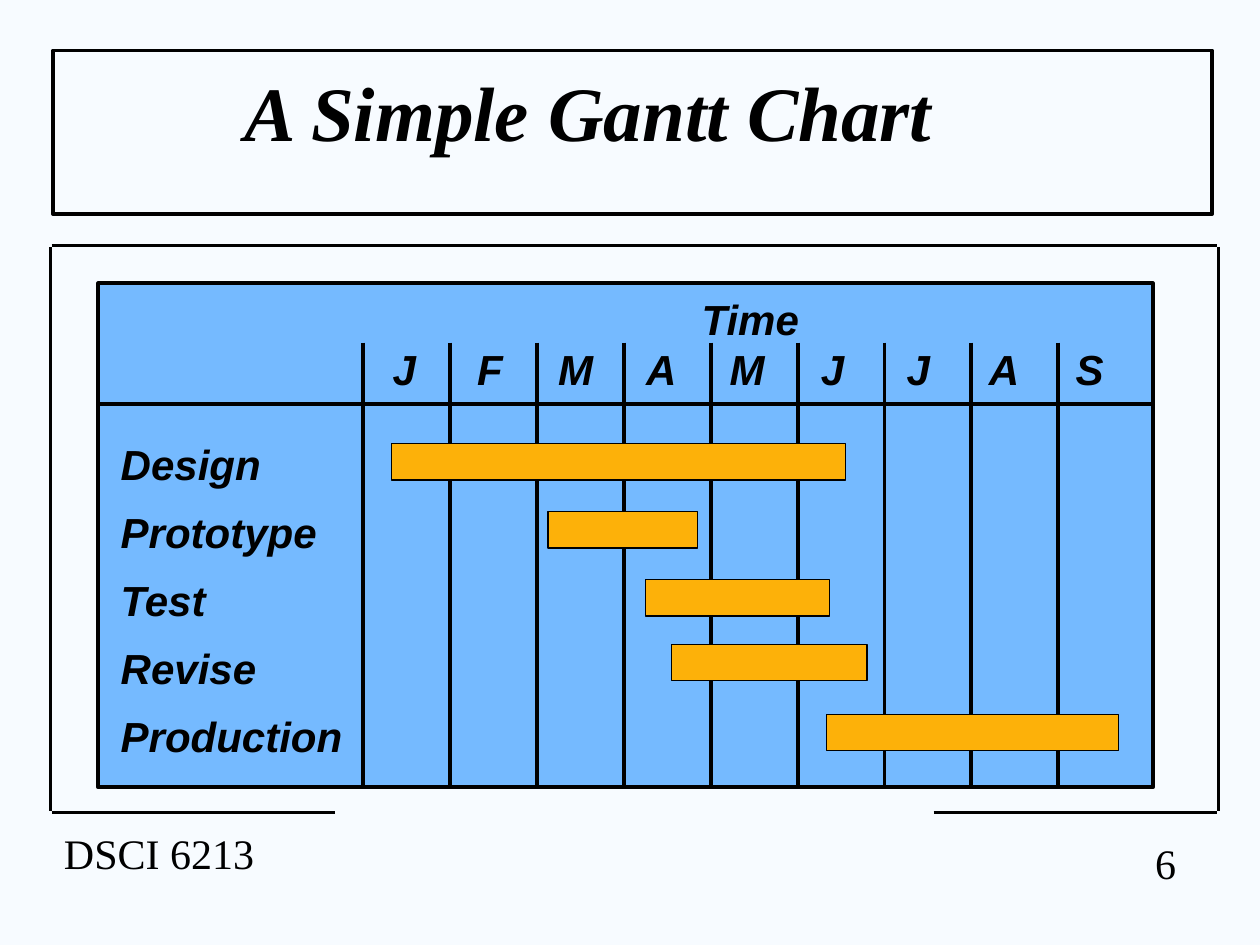
"""Build a slide with a simple Gantt chart."""
from dataclasses import dataclass

from lxml import etree
from pptx import Presentation
from pptx import util as u
from pptx.dml.color import RGBColor
from pptx.enum import shapes, text
from pptx.oxml import ns


@dataclass(frozen=True)
class Theme:
    """Colours, fonts, type sizes and line widths of the slide."""
    paper: str = "F7FBFF"
    ink: str = "000000"
    panel: str = "75BAFF"
    bar: str = "FDB109"
    serif: str = "Times New Roman"
    sans: str = "Arial"
    title_size: float = 44
    body_size: float = 24
    frame_line: float = 2
    grid_line: float = 2.25
    bar_line: float = 0.75


@dataclass(frozen=True)
class Grid:
    """Month columns and task rows of the chart, in inches."""
    left: float = 2.88
    column: float = 0.69
    top: float = 3.52
    row: float = 0.54
    bar_height: float = 0.29

    def x(self, month):
        """Return the horizontal place of a month."""
        return self.left + month * self.column

    def y(self, row):
        """Return the top of a task row."""
        return self.top + row * self.row


THEME = Theme()
GRID = Grid()
PANEL = (0.78, 2.25, 8.37, 4)
HEADER_TOP, HEADER_BOTTOM = 2.72, 3.21
MONTHS = "JFMAMJJAS"
MONTH_TAB, MONTH_PITCH = 0.12, 0.68
# task, row, first month, months
TASKS = (
    ("Design", 0, 0.33, 5.22),
    ("Prototype", 1, 2.13, 1.72),
    ("Test", 2, 3.25, 2.12),
    ("Revise", 2.95, 3.55, 2.25),
    ("Production", 3.98, 5.33, 3.36),
)


def inches(*lengths):
    """Convert several lengths to slide units."""
    return [u.Inches(length) for length in lengths]


def colour(value):
    """Return a colour from its hexadecimal text."""
    return RGBColor.from_string(value)


def add_rectangle(slide, box, width, fill=None):
    """Add an outlined rectangle, filled when a colour is given."""
    shape = slide.shapes.add_shape(shapes.MSO_SHAPE.RECTANGLE, *inches(*box))
    shape.shadow.inherit = False
    if fill:
        shape.fill.solid()
        shape.fill.fore_color.rgb = colour(fill)
    else:
        shape.fill.background()
    shape.line.color.rgb = colour(THEME.ink)
    shape.line.width = u.Pt(width)


def add_line(slide, start, end, width):
    """Add a straight line between two points."""
    line = slide.shapes.add_connector(
        shapes.MSO_CONNECTOR.STRAIGHT, *inches(*start, *end))
    line.line.color.rgb = colour(THEME.ink)
    line.line.width = u.Pt(width)
    etree.SubElement(line._element.spPr, ns.qn("a:effectLst"))


def add_run(paragraph, words, family, size, strong=True):
    """Add one formatted run to a paragraph."""
    run = paragraph.add_run()
    run.text = words
    run.font.name = family
    run.font.size = u.Pt(size)
    run.font.bold = run.font.italic = strong
    run.font.color.rgb = colour(THEME.ink)


def add_text(slide, box, lines, family, strong=True, spacing=1.0):
    """Add a text box with one paragraph for each line."""
    frame = slide.shapes.add_textbox(*inches(*box)).text_frame
    frame.word_wrap = True
    for index, words in enumerate(lines):
        paragraph = frame.add_paragraph() if index else frame.paragraphs[0]
        paragraph.line_spacing = spacing
        add_run(paragraph, words, family, THEME.body_size, strong)
    return frame


def set_centre_tabs(paragraph, first, pitch, count):
    """Give a paragraph evenly spaced centred tab stops."""
    tabs = etree.SubElement(paragraph._p.get_or_add_pPr(), ns.qn("a:tabLst"))
    for index in range(count):
        etree.SubElement(tabs, ns.qn("a:tab"), algn="ctr",
                         pos=str(u.Inches(first + index * pitch)))


def add_title(slide, words):
    """Place and format the title inside its frame."""
    add_rectangle(slide, (0.42, 0.4, 9.2, 1.3), THEME.frame_line)
    title = slide.shapes.title
    title.left, title.top, title.width, title.height = inches(0.42, 0.45, 8.5, 0.97)
    title.text_frame.vertical_anchor = text.MSO_ANCHOR.MIDDLE
    paragraph = title.text_frame.paragraphs[0]
    paragraph.alignment = text.PP_ALIGN.CENTER
    paragraph.line_spacing = 0.85
    add_run(paragraph, words, THEME.serif, THEME.title_size)


def add_border(slide):
    """Draw the border that is open at the bottom."""
    left, right, top, bottom = 0.4, 9.67, 1.95, 6.45
    gap, stub = 0.01, 2.25
    inner_left, inner_right = left + gap, right - gap
    for start, end in (
        ((inner_left, top), (inner_right, top)),
        ((left, top + gap), (left, bottom - gap)),
        ((right, top + gap), (right, bottom - gap)),
        ((inner_left, bottom), (inner_left + stub, bottom)),
        ((inner_right - stub, bottom), (inner_right, bottom)),
    ):
        add_line(slide, start, end, THEME.frame_line)


def add_calendar(slide):
    """Draw the panel, its heading, its grid and the task names."""
    left, top, width, height = PANEL
    add_rectangle(slide, PANEL, THEME.grid_line, THEME.panel)
    heading = add_text(slide, (2.99, 2.28, 5.93, 0.9),
                       ("Time", "\t" + "\t".join(MONTHS)), THEME.sans)
    time, months = heading.paragraphs
    time.alignment = text.PP_ALIGN.CENTER
    set_centre_tabs(months, MONTH_TAB, MONTH_PITCH, len(MONTHS))
    for month in range(len(MONTHS)):
        x = GRID.x(month)
        add_line(slide, (x, HEADER_TOP), (x, top + height), THEME.grid_line)
    add_line(slide, (left, HEADER_BOTTOM), (left + width, HEADER_BOTTOM),
             THEME.grid_line)
    add_text(slide, (0.86, 3.29, 2.02, 2.8), [task[0] for task in TASKS],
             THEME.sans, spacing=1.35)


def add_bars(slide):
    """Draw one bar for each task."""
    for _, row, start, months in TASKS:
        box = (GRID.x(start), GRID.y(row), months * GRID.column, GRID.bar_height)
        add_rectangle(slide, box, THEME.bar_line, THEME.bar)


def main():
    """Build and save the presentation."""
    presentation = Presentation()
    presentation.slide_width, presentation.slide_height = inches(10, 7.5)
    slide = presentation.slides.add_slide(presentation.slide_layouts[5])
    slide.background.fill.solid()
    slide.background.fill.fore_color.rgb = colour(THEME.paper)
    add_border(slide)
    add_text(slide, (9.07, 6.6, 0.59, 0.5), ("6",), THEME.serif, strong=False)
    add_text(slide, (0.41, 6.52, 1.73, 0.5), ("DSCI 6213",), THEME.serif, strong=False)
    add_title(slide, "A Simple Gantt Chart")
    add_calendar(slide)
    add_bars(slide)
    presentation.save("out.pptx")


if __name__ == "__main__":
    main()
